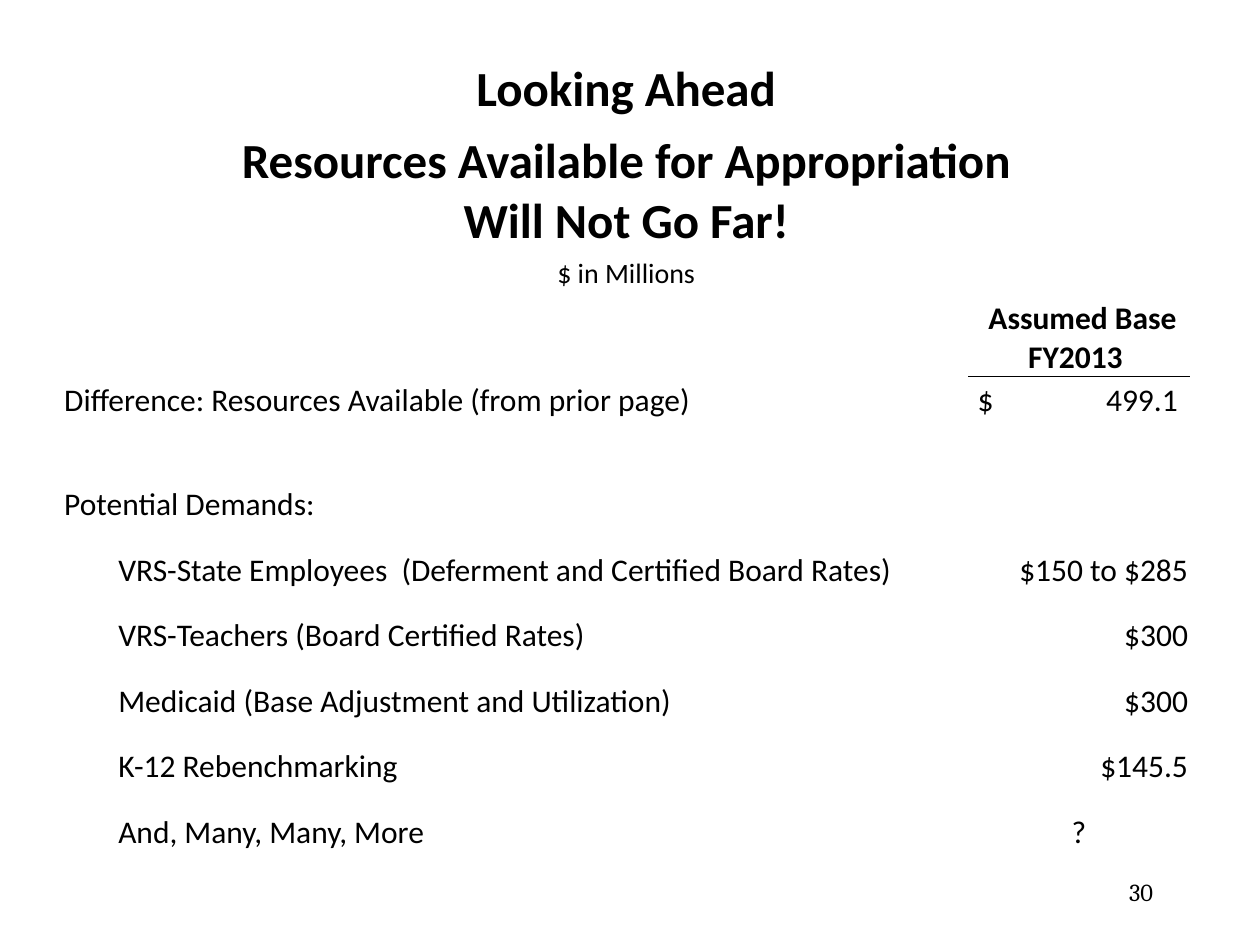
from lxml import etree
from pptx import Presentation
from pptx import util as u
from pptx.dml.color import RGBColor
from pptx.enum import text
from pptx.oxml import ns

PX = 9144
BLACK = RGBColor(0, 0, 0)
LEFT, CENTER, RIGHT = text.PP_ALIGN.LEFT, text.PP_ALIGN.CENTER, text.PP_ALIGN.RIGHT
COLS = [4, 37, 676, 175]
ROWS = [53, 105, 31, 68, 34, 34, 49] + [52] * 5
HEADINGS = [
    ("Looking Ahead", 28, True),
    ("Resources Available for Appropriation\nWill Not Go Far!", 28, True),
    ("$ in Millions", 16, False),
]
DEMANDS = [
    ("VRS-State Employees  (Deferment and Certified Board Rates)", "$150 to $285", RIGHT),
    ("VRS-Teachers (Board Certified Rates)", "$300", RIGHT),
    ("Medicaid (Base Adjustment and Utilization)", "$300", RIGHT),
    ("K-12 Rebenchmarking", "$145.5", RIGHT),
    ("And, Many, Many, More", "?", CENTER),
]


def px(n):
    return u.Emu(n * PX)


def write(tf, content, size=18, bold=False, align=LEFT, font="Calibri"):
    tf.text = content
    for p in tf.paragraphs:
        p.alignment = align
        for r in p.runs:
            r.font.name = font
            r.font.size = u.Pt(size)
            r.font.bold = bold
            r.font.color.rgb = BLACK


def clear_cell(cell):
    cell.fill.background()
    cell.vertical_anchor = text.MSO_ANCHOR.BOTTOM
    cell.margin_left = cell.margin_right = cell.margin_top = px(1)
    cell.margin_bottom = 0
    cell.text_frame.paragraphs[0].font.size = u.Pt(16)


def add_border(cell, side):
    line = etree.Element(ns.qn(f"a:{side}"), w=str(u.Pt(0.5)))
    fill = etree.SubElement(line, ns.qn("a:solidFill"))
    etree.SubElement(fill, ns.qn("a:srgbClr"), val=str(BLACK))
    cell._tc.get_or_add_tcPr().insert(0, line)


def add_amount(cell, content):
    cell.margin_left = px(7)
    write(cell.text_frame, content)
    p_pr = cell.text_frame.paragraphs[0]._p.get_or_add_pPr()
    tabs = etree.Element(ns.qn("a:tabLst"))
    etree.SubElement(tabs, ns.qn("a:tab"), pos=str(px(159)), algn="r")
    p_pr.insert(0, tabs)


def add_resources(s, left, top):
    frame = s.shapes.add_table(len(ROWS), len(COLS), px(left), px(top), px(sum(COLS)), px(sum(ROWS)))
    table = frame.table
    table.first_row = table.horz_banding = False
    for column, width in zip(table.columns, COLS):
        column.width = px(width)
    for row, height in zip(table.rows, ROWS):
        row.height = px(height)
    for cell in table.iter_cells():
        clear_cell(cell)

    last_merged = [3, 3, 3, None, 2, 1, 2] + [1] * len(DEMANDS)
    for i, last in enumerate(last_merged):
        first, last = (1, 2) if last is None else (0, last)
        table.cell(i, first).merge(table.cell(i, last))

    for i, (content, size, bold) in enumerate(HEADINGS):
        write(table.cell(i, 0).text_frame, content, size, bold, CENTER)
    header, amount = table.cell(3, 3), table.cell(4, 3)
    write(header.text_frame, " Assumed Base FY2013 ", bold=True, align=CENTER)
    write(table.cell(4, 0).text_frame, "Difference: Resources Available (from prior page)")
    add_amount(amount, "$\t499.1")
    add_border(header, "lnB")
    add_border(amount, "lnT")
    write(table.cell(6, 0).text_frame, "Potential Demands:")
    for i, (label, value, align) in enumerate(DEMANDS, 7):
        write(table.cell(i, 2).text_frame, label)
        write(table.cell(i, 3).text_frame, value, align=align)


def add_page_number(s, left, top, width, height):
    tf = s.shapes.add_textbox(px(left), px(top), px(width), px(height)).text_frame
    tf.word_wrap = True
    tf.vertical_anchor = text.MSO_ANCHOR.MIDDLE
    write(tf, "30", 14, align=RIGHT, font="Cambria")


def main():
    prs = Presentation()
    prs.slide_width, prs.slide_height = px(1000), px(750)
    s = prs.slides.add_slide(prs.slide_layouts[6])
    add_page_number(s, 717, 683, 208, 50)
    add_resources(s, 50, 42)
    prs.save("out.pptx")


if __name__ == "__main__":
    main()
